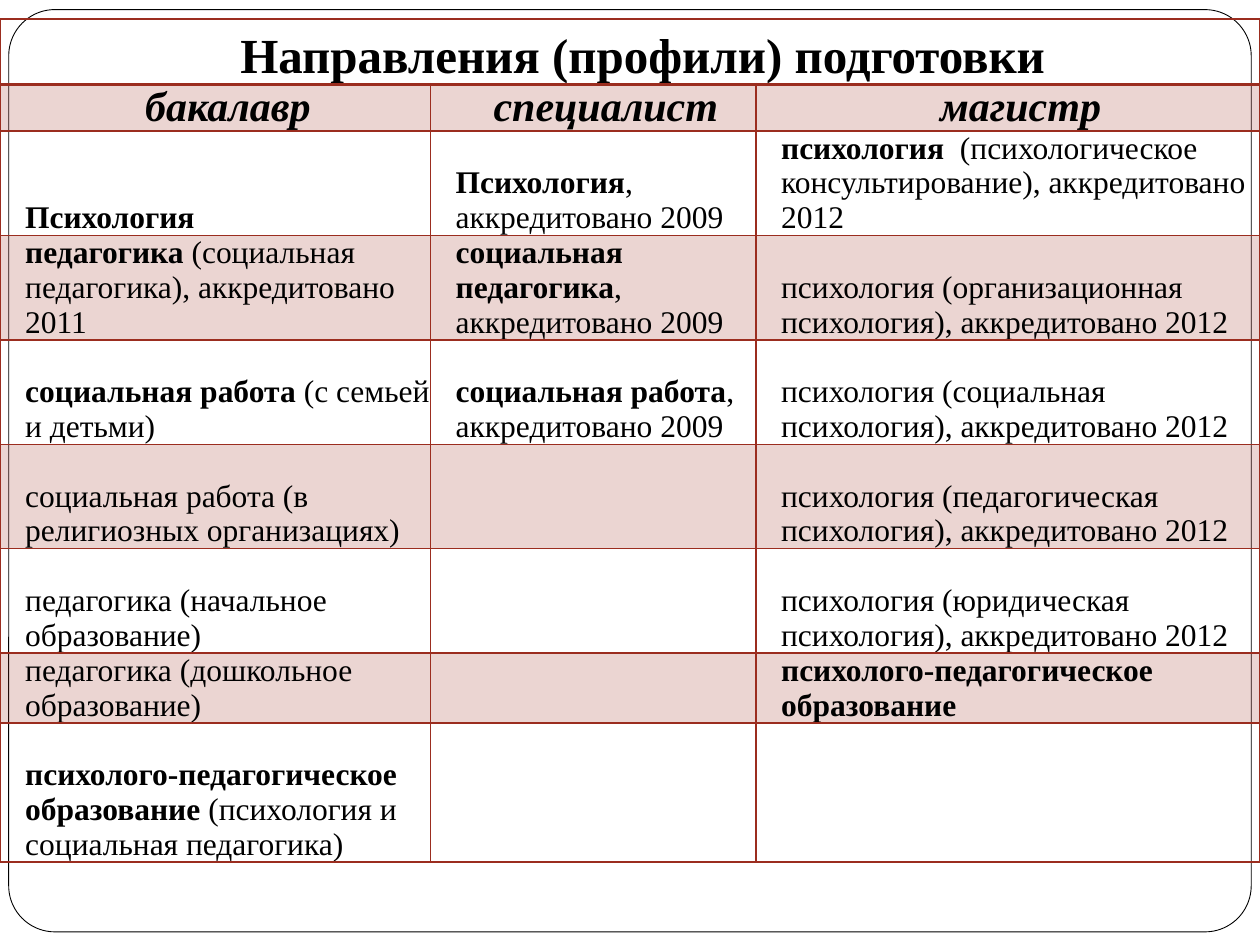
from lxml import etree
from pptx import Presentation
from pptx.dml.color import RGBColor
from pptx.enum.shapes import MSO_SHAPE
from pptx.enum.text import MSO_ANCHOR, PP_ALIGN
from pptx.oxml.ns import qn
from pptx.util import Pt

ROUND = MSO_SHAPE.ROUNDED_RECTANGLE
BOTTOM = MSO_ANCHOR.BOTTOM
CENTER, LEFT = PP_ALIGN.CENTER, PP_ALIGN.LEFT
BLACK = RGBColor(0x00, 0x00, 0x00)
WHITE = RGBColor(0xFF, 0xFF, 0xFF)
RED = RGBColor(0x9B, 0x2D, 0x1F)

TITLE = "Направления (профили) подготовки"
HEADS = ["бакалавр", "специалист", "магистр"]
ROWS = [
    [("Психология", ""), ("Психология", ", аккредитовано 2009"),
     ("психология", "  (психологическое консультирование), аккредитовано 2012")],
    [("педагогика", " (социальная педагогика), аккредитовано 2011"),
     ("социальная педагогика", ", аккредитовано 2009"),
     ("", "психология (организационная психология), аккредитовано 2012")],
    [("социальная работа ", "(с семьей и детьми)"),
     ("социальная работа", ", аккредитовано 2009"),
     ("", "психология (социальная психология), аккредитовано 2012")],
    [("", "социальная работа (в религиозных организациях)"), ("", ""),
     ("", "психология (педагогическая психология), аккредитовано 2012")],
    [("", "педагогика (начальное образование)"), ("", ""),
     ("", "психология (юридическая психология), аккредитовано 2012")],
    [("", "педагогика (дошкольное образование)"), ("", ""),
     ("психолого-педагогическое образование", "")],
    [("психолого-педагогическое образование ",
      "(психология и социальная педагогика)"), ("", ""), ("", "")],
]
WIDTHS = [246, 186, 288]
HEIGHTS = [37.4, 26.6] + [59.6] * 5 + [39.8, 79.4]


class Deck:
    """Holds the table style and the current slide."""

    font = "Times New Roman"
    indent = 14.4

    def __init__(self):
        self.prs = Presentation()
        self.prs.slide_width, self.prs.slide_height = Pt(720), Pt(540)
        self.slide = self.prs.slides.add_slide(self.prs.slide_layouts[6])

    def frame(self, x, y, w, h):
        """Draw the rounded page frame."""
        box = self.slide.shapes.add_shape(ROUND, Pt(x), Pt(y), Pt(w), Pt(h))
        box.adjustments[0] = 0.05
        box.shadow.inherit = False
        box.fill.solid()
        box.fill.fore_color.rgb = WHITE
        box.line.color.rgb = BLACK
        box.line.width = Pt(0.5)

    def grid(self, x, y, widths, heights):
        """Add an unstyled table with the given tracks."""
        shape = self.slide.shapes.add_table(
            len(heights), len(widths), Pt(x), Pt(y),
            Pt(sum(widths)), Pt(sum(heights)))
        table = shape.table
        table.first_row = table.horz_banding = False
        for col, width in zip(table.columns, widths):
            col.width = Pt(width)
        for row, height in zip(table.rows, heights):
            row.height = Pt(height)
        return table

    def cell(self, cell, tint=False, top=1, base=1):
        """Set the margins, fill and borders of a cell."""
        cell.margin_left = cell.margin_right = 0
        cell.margin_top = cell.margin_bottom = 0
        cell.vertical_anchor = BOTTOM
        props = cell._tc.get_or_add_tcPr()
        for side, width in zip("LRTB", (1, 1, top, base)):
            line = etree.SubElement(props, qn(f"a:ln{side}"), w=str(Pt(width)))
            fill = etree.SubElement(line, qn("a:solidFill"))
            etree.SubElement(fill, qn("a:srgbClr"), val=str(RED))
        if tint:
            cell.fill.solid()
            cell.fill.fore_color.rgb = RED
            color = props.find(qn("a:solidFill")).find(qn("a:srgbClr"))
            etree.SubElement(color, qn("a:alpha"), val="20000")
        else:
            cell.fill.background()

    def text(self, cell, bold, plain="", size=18, align=LEFT, italic=False):
        """Write a bold run followed by a plain one."""
        para = cell.text_frame.paragraphs[0]
        para.alignment = align
        para._p.get_or_add_pPr().set("marL", str(Pt(self.indent)))
        para.font.name = self.font
        para.font.size = Pt(size)
        para.font.italic = italic
        para.font.color.rgb = BLACK
        for words, heavy in ((bold, True), (plain, False)):
            if words:
                run = para.add_run()
                run.text = words
                run.font.bold = heavy


def main():
    deck = Deck()
    deck.frame(5, 5.5, 710, 527)
    table = deck.grid(0, 10.8, WIDTHS, HEIGHTS)
    for col, head in enumerate(HEADS):
        deck.cell(table.cell(0, col), base=2)
        deck.cell(table.cell(1, col), tint=True, top=2)
        deck.text(table.cell(1, col), head, size=24, align=CENTER, italic=True)
    table.cell(0, 0).merge(table.cell(0, 2))
    deck.text(table.cell(0, 0), TITLE, size=28, align=CENTER)
    for row, items in enumerate(ROWS, 2):
        for col, (bold, plain) in enumerate(items):
            cell = table.cell(row, col)
            deck.cell(cell, tint=row % 2 == 1)
            deck.text(cell, bold, plain)
    deck.prs.save("out.pptx")


if __name__ == "__main__":
    main()
